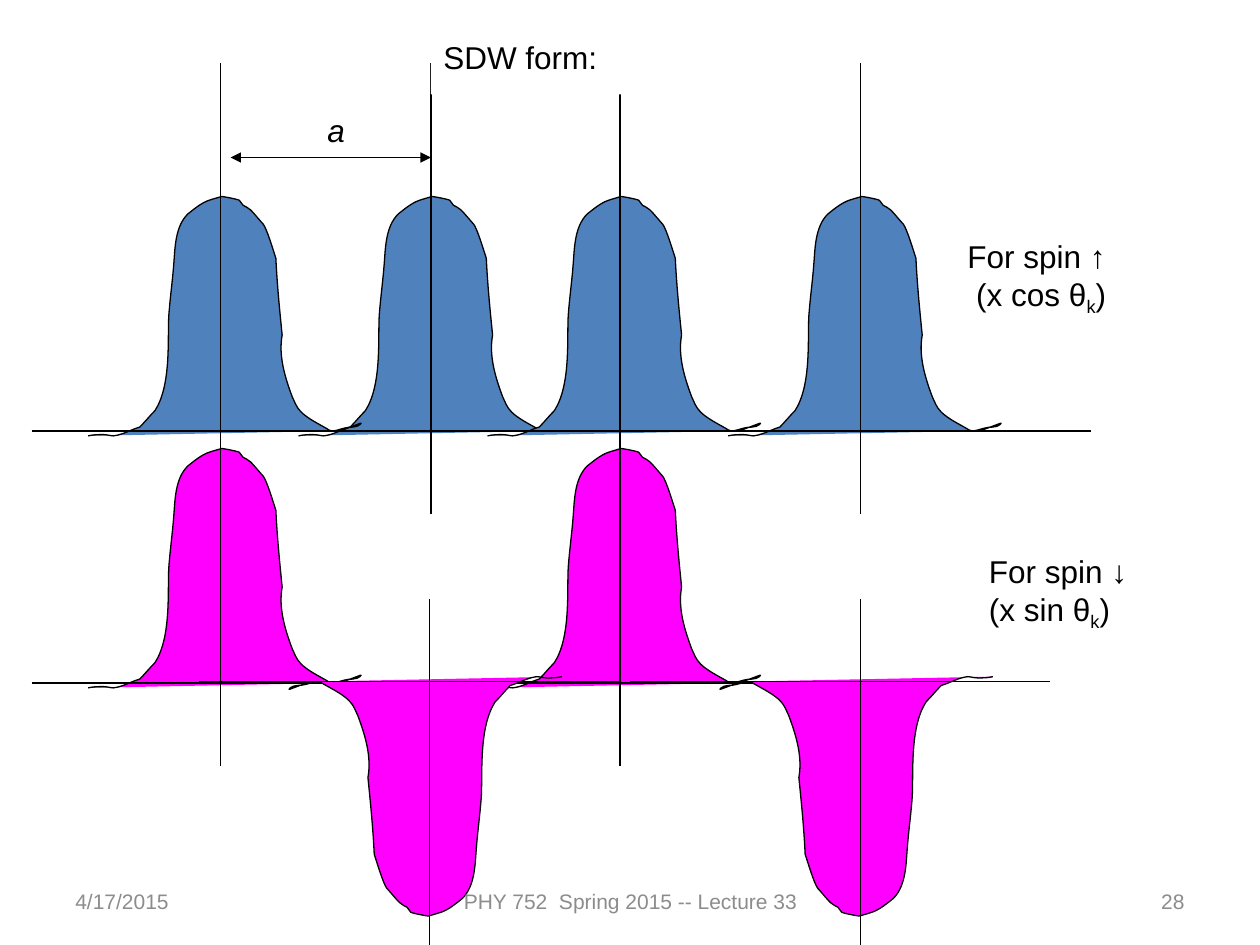
from lxml import etree
from pptx import Presentation
from pptx.dml.color import RGBColor
from pptx.enum.shapes import MSO_CONNECTOR
from pptx.enum.text import MSO_ANCHOR, MSO_AUTO_SIZE, PP_ALIGN
from pptx.oxml.ns import qn
from pptx.util import Pt

PX = 9144
PAGE_WIDTH, PAGE_HEIGHT = 1000, 750
STRAIGHT = MSO_CONNECTOR.STRAIGHT
MIDDLE = MSO_ANCHOR.MIDDLE
FIT_SHAPE = MSO_AUTO_SIZE.SHAPE_TO_FIT_TEXT
LEFT, CENTER, RIGHT = PP_ALIGN.LEFT, PP_ALIGN.CENTER, PP_ALIGN.RIGHT

BLACK = RGBColor(0x00, 0x00, 0x00)
WHITE = RGBColor(0xFF, 0xFF, 0xFF)
GRAY = RGBColor(0x8C, 0x8C, 0x8C)
BLUE = RGBColor(0x4F, 0x81, 0xBD)
MAGENTA = RGBColor(0xFF, 0x00, 0xFF)
FONT = "Arial"

CREST_WIDTH, CREST_HEIGHT = 333, 358
AXIS_X, BASELINE_Y = 150, 292
OUTLINE_LEFT, OUTLINE_TOP = 45, 106
OUTLINE_WIDTH, OUTLINE_HEIGHT = 216, 190
OUTLINE_START, OUTLINE_END = (0, 190), (200, 186)
OUTLINE_CURVES = [
    ((4, 189), (8, 189), (12, 189)),
    ((15, 189), (18, 190), (20, 190)),
    ((28, 189), (34, 185), (41, 183)),
    ((45, 179), (49, 174), (53, 170)),
    ((66, 150), (63, 114), (64, 95)),
    ((65, 81), (67, 67), (68, 53)),
    ((69, 41), (69, 24), (79, 14)),
    ((84, 10), (90, 5), (96, 3)),
    ((99, 2), (106, 0), (106, 0)),
    ((107, 0), (118, 2), (120, 3)),
    ((121, 4), (122, 6), (123, 7)),
    ((125, 8), (127, 9), (128, 10)),
    ((129, 10), (137, 20), (139, 22)),
    ((142, 26), (147, 43), (149, 49)),
    ((150, 70), (152, 90), (154, 110)),
    ((151, 126), (156, 143), (162, 159)),
    ((164, 163), (165, 167), (169, 171)),
    ((174, 176), (182, 180), (189, 184)),
    ((195, 189), (200, 183), (210, 183)),
    ((215, 183), (218, 179), (216, 180)),
]


def add_outline(shapes, left, top):
    builder = shapes.build_freeform(*OUTLINE_START, scale=PX)
    corners = [curve[-1] for curve in OUTLINE_CURVES]
    builder.add_line_segments(corners + [OUTLINE_END], close=False)
    outline = builder.convert_to_shape(PX * left, PX * top)
    segments = list(outline._element.iter(qn("a:lnTo")))
    for segment, curve in zip(segments, OUTLINE_CURVES):
        segment.tag = qn("a:cubicBezTo")
        for index, (x, y) in enumerate(curve[:2]):
            control = etree.Element(qn("a:pt"), x=str(x), y=str(y))
            segment.insert(index, control)
    return outline


def add_line(shapes, start, end, arrows=False):
    line = shapes.add_connector(STRAIGHT, *(PX * value for value in (*start, *end)))
    line.line.color.rgb = BLACK
    line.line.width = Pt(0.75)
    properties = line._element.spPr
    etree.SubElement(properties, qn("a:effectLst"))
    if arrows:
        for tag in ("a:headEnd", "a:tailEnd"):
            etree.SubElement(properties.find(qn("a:ln")), qn(tag), type="triangle")


def add_crest(page, box, color, inverted=False):
    left, top = box
    shapes = page.shapes.add_group_shape().shapes
    outline_left, outline_top = OUTLINE_LEFT, OUTLINE_TOP
    axis_x, baseline_y = AXIS_X, BASELINE_Y
    if inverted:
        outline_left = CREST_WIDTH - OUTLINE_LEFT - OUTLINE_WIDTH
        outline_top = CREST_HEIGHT - OUTLINE_TOP - OUTLINE_HEIGHT
        axis_x, baseline_y = CREST_WIDTH - AXIS_X, CREST_HEIGHT - BASELINE_Y

    outline = add_outline(shapes, left + outline_left, top + outline_top)
    outline.shadow.inherit = False
    outline.fill.solid()
    outline.fill.fore_color.rgb = color
    outline.line.color.rgb = BLACK
    outline.line.width = Pt(0.75)
    outline.rotation = 180 if inverted else 0

    axis = [(left + axis_x, top), (left + axis_x, top + CREST_HEIGHT)]
    baseline = [(left, top + baseline_y), (left + CREST_WIDTH, top + baseline_y)]
    for ends in (axis, baseline):
        add_line(shapes, *(reversed(ends) if inverted else ends))


def format_span(span, size=18, color=BLACK):
    span.font.name = FONT
    span.font.size = Pt(size)
    span.font.color.rgb = color


def add_text(page, box, text, size=18, color=BLACK, align=LEFT):
    label = page.shapes.add_textbox(*(PX * value for value in box))
    frame = label.text_frame
    frame.text = text
    for para in frame.paragraphs:
        para.alignment = align
        for span in para.runs:
            format_span(span, size, color)
    return label


def add_label(page, box, text):
    label = add_text(page, box, text)
    label.text_frame.word_wrap = False
    label.text_frame.auto_size = FIT_SHAPE
    return label


def add_spin_label(page, box, text):
    para = add_label(page, box, text).text_frame.paragraphs[-1]
    for piece, baseline in (("k", "-25000"), (")", "0")):
        span = para.add_run()
        span.text = piece
        format_span(span)
        span._r.get_or_add_rPr().set("baseline", baseline)


def add_spacing(page, box):
    left, top, width, height = box
    add_line(page.shapes, (left, top + height), (left + width, top + height), arrows=True)
    label = add_label(page, (left + 67, top, 37, 50), "a")
    label.text_frame.paragraphs[0].runs[0].font.italic = True


def add_title(page, box):
    title = add_label(page, box, "SDW form:")
    title.fill.solid()
    title.fill.fore_color.rgb = WHITE


def add_footer(page, box):
    left, top, width, height = box
    parts = (
        (0, 233, "4/17/2015", LEFT),
        (292, 317, "PHY 752  Spring 2015 -- Lecture 33", CENTER),
        (width - 233, 233, "28", RIGHT),
    )
    for offset, part_width, text, align in parts:
        part = add_text(page, (left + offset, top, part_width, height),
                        text, 12, GRAY, align)
        part.text_frame.word_wrap = True
        part.text_frame.vertical_anchor = MIDDLE


def main():
    deck = Presentation()
    deck.slide_width, deck.slide_height = PX * PAGE_WIDTH, PX * PAGE_HEIGHT
    page = deck.slides.add_slide(deck.slide_layouts[6])

    for left in (192, 25, 533, 342):
        add_crest(page, (left, 50), BLUE)
    add_spacing(page, (183, 83, 159, 42))
    add_spin_label(page, (758, 183, 159, 90), "For spin ↑\n (x cos θ")
    for left in (25, 342):
        add_crest(page, (left, 250), MAGENTA)
    for left in (158, 500):
        add_crest(page, (left, 475), MAGENTA, inverted=True)
    add_spin_label(page, (775, 433, 159, 90), "For spin ↓\n(x sin θ")
    add_title(page, (342, 25, 177, 50))
    add_footer(page, (50, 695, 900, 40))

    deck.save("out.pptx")


if __name__ == "__main__":
    main()
